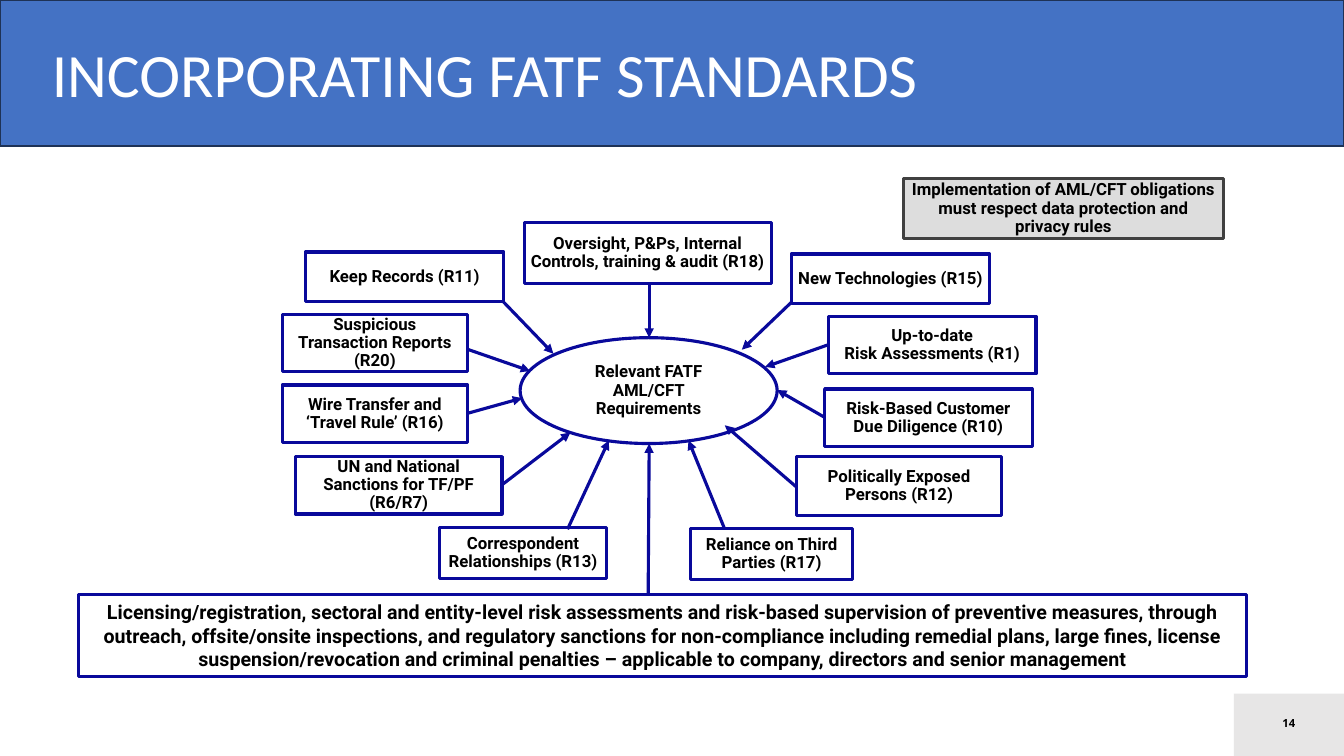
from pptx import Presentation
from pptx.util import Pt
from pptx.dml.color import RGBColor
from pptx.enum.shapes import MSO_SHAPE as Shape, MSO_CONNECTOR as Link
from pptx.enum.text import PP_ALIGN as Align, MSO_ANCHOR as Anchor
from pptx.oxml.ns import qn
from lxml.etree import SubElement

INK = {"navy": "09099B", "blue": "4472C4", "edge": "1E3256", "grey": "DDDDDD",
       "dark": "404040", "pale": "E7E6E6", "black": "000000", "white": "FFFFFF"}


def tint(name):
    return RGBColor.from_string(INK[name])


def block(area, text="", size=12, font="Roboto", color="black", bold=True,
          fill=None, line="navy", width=2.25, pad=(4.3, 4.3), space=0.9,
          align=Align.CENTER, kind=Shape.RECTANGLE):
    item = slide.shapes.add_shape(kind, *map(Pt, area))
    item.shadow.inherit = False
    if fill:
        item.fill.solid()
        item.fill.fore_color.rgb = tint(fill)
    else:
        item.fill.background()
    if line:
        item.line.color.rgb = tint(line)
        item.line.width = Pt(width)
    else:
        item.line.fill.background()
    if not text:
        return
    frame = item.text_frame
    frame.word_wrap = True
    frame.vertical_anchor = Anchor.MIDDLE
    frame.margin_left = frame.margin_right = Pt(pad[0])
    frame.margin_top = frame.margin_bottom = Pt(pad[1])
    para = frame.paragraphs[0]
    para.alignment = align
    para.line_spacing = space
    for i, part in enumerate(text.split("\n")):
        if i:
            para.add_line_break()
        run = para.add_run()
        run.text = part
        run.font.size = Pt(size)
        run.font.name = font
        run.font.bold = bold
        run.font.color.rgb = tint(color)


deck = Presentation()
deck.slide_width, deck.slide_height = Pt(960), Pt(540)
slide = deck.slides.add_slide(deck.slide_layouts[6])

# Page number
block((881.3, 495.4, 78.7, 44.6), fill="pale", line=None)
block((881.3, 501.8, 78.7, 28.8), "14", size=8, font="Open Sans", line=None, space=1.0)

# Hub
block((371.5, 241.2, 183.6, 75.6), "Relevant FATF AML/CFT Requirements",
      pad=(7.7, 9.8), kind=Shape.OVAL)

# Requirements around the hub
needs = [
    (218.2, 180, 141.8, 35.3, "Keep Records (R11)"),
    (211, 326.2, 147.6, 41, "UN and National Sanctions for TF/PF (R6/R7)"),
    (374.4, 159.1, 176.4, 43.2, "Oversight, P&Ps, Internal Controls, training & audit (R18)"),
    (591.8, 226.1, 148.3, 41, "Up-to-date\nRisk Assessments (R1)"),
    (589, 277.9, 148.3, 41, "Risk-Based Customer Due Diligence (R10)"),
    (568.8, 326.2, 146.9, 41.8, "Politically Exposed Persons (R12)"),
    (493.2, 377.3, 115.9, 36.7, "Reliance on Third Parties (R17)"),
    (201.6, 275, 132.5, 41, "Wire Transfer and ‘Travel Rule’ (R16)"),
    (201.6, 224.6, 132.5, 41, "Suspicious Transaction Reports (R20)"),
    (313.9, 376.6, 119.5, 36.7, "Correspondent Relationships (R13)"),
    (565.2, 181.4, 141.8, 35.3, "New Technologies (R15)"),
]
for *area, text in needs:
    block(area, text)

# Arrows to the hub: start x, y and end x, y
arrows = [
    (463.7, 203.8, 463.7, 241.2),
    (358.6, 214.6, 395.3, 252.7),
    (565.2, 216, 529.9, 249.8),
    (334.8, 249.8, 378.7, 265),
    (591.8, 246.2, 546.5, 262.1),
    (334.1, 295.2, 373, 284.4),
    (589, 298.1, 555.1, 278.6),
    (568.8, 347.8, 517.7, 303.8),
    (358.6, 346.3, 407.5, 308.9),
    (405.4, 378, 434.9, 314.6),
    (517.7, 378, 491.8, 314.6),
    (463, 424.8, 463.7, 316.8),
]
for ends in arrows:
    arrow = slide.shapes.add_connector(Link.STRAIGHT, *map(Pt, ends))
    arrow.line.color.rgb = tint("navy")
    arrow.line.width = Pt(2.25)
    SubElement(arrow.line._get_or_add_ln(), qn("a:tailEnd"), type="triangle")
    SubElement(arrow._element.spPr, qn("a:effectLst"))

# Data protection note
block((645.1, 127.4, 229, 43.2),
      "Implementation of AML/CFT obligations must respect data protection and privacy rules",
      fill="grey", line="dark", width=2)

# Supervision
block((56.2, 424.8, 834.5, 58.3),
      "Licensing/registration, sectoral and entity-level risk assessments and "
      "risk-based supervision of preventive measures, through outreach, "
      "offsite/onsite inspections, and regulatory sanctions for non-compliance "
      "including remedial plans, large fines, license suspension/revocation and "
      "criminal penalties – applicable to company, directors and senior management",
      size=14, pad=(7.2, 3.6), space=1.0)

# Title band
block((0, 0, 960, 104.4), "INCORPORATING FATF STANDARDS", size=44, font="Calibri",
      color="white", bold=False, fill="blue", line="edge", width=1,
      pad=(37, 3.6), space=1.0, align=Align.LEFT)

deck.save("out.pptx")
